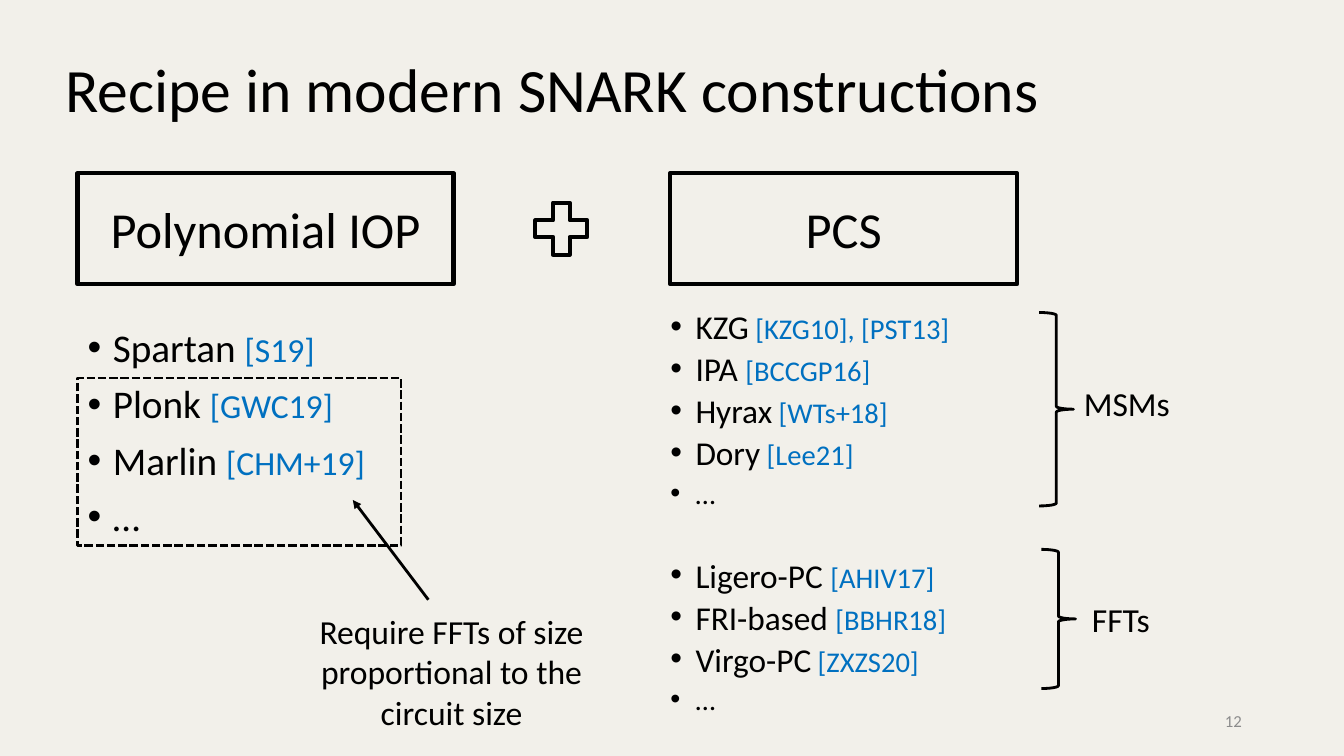
import pptx
import pptx.dml.color
import pptx.enum.dml
import pptx.enum.shapes
import pptx.enum.text
import pptx.oxml.ns
import pptx.util
from lxml import etree

Pt = pptx.util.Pt
ALIGN = pptx.enum.text.PP_ALIGN
ANCHOR = pptx.enum.text.MSO_ANCHOR
SHAPE = pptx.enum.shapes.MSO_SHAPE

COLORS = {"background": "F2F0EA", "ink": "000000", "citation": "0070C0", "number": "8C8C8C"}
FONT = "Calibri"
BULLET_INDENT = 18

IOP_ITEMS = [("Spartan ", "[S19]"), ("Plonk ", "[GWC19]"), ("Marlin ", "[CHM+19]"), ("…", "")]
MSM_ITEMS = [("KZG", " [KZG10], [PST13]"), ("IPA ", "[BCCGP16]"), ("Hyrax", " [WTs+18]"),
             ("Dory", " [Lee21]"), ("", "…")]
FFT_ITEMS = [("Ligero-PC ", "[AHIV17]"), ("FRI-based ", "[BBHR18]"), ("Virgo-PC", " [ZXZS20]"),
             ("", "…")]


def rgb(name):
    return pptx.dml.color.RGBColor.from_string(COLORS[name])


def style_font(font, size, color="ink"):
    font.name = FONT
    font.size = Pt(size)
    font.color.rgb = rgb(color)


def place(shape, left, top, width, height):
    shape.left, shape.top = Pt(left), Pt(top)
    shape.width, shape.height = Pt(width), Pt(height)


def write_line(shape, text, size, align, color="ink", anchor=ANCHOR.TOP):
    frame = shape.text_frame
    frame.word_wrap = True
    frame.auto_size = pptx.enum.text.MSO_AUTO_SIZE.NONE
    frame.vertical_anchor = anchor
    frame.text = text
    paragraph = frame.paragraphs[0]
    paragraph.alignment = align
    style_font(paragraph.font, size, color)
    return paragraph


def add_label(slide, text, box, size=24, align=ALIGN.CENTER, **options):
    label = slide.shapes.add_textbox(*map(Pt, box))
    write_line(label, text, size, align, **options)


def add_outline(slide, kind, box, weight, dash=None):
    """Add an unfilled preset shape with a black line."""
    shape = slide.shapes.add_shape(kind, *map(Pt, box))
    shape.shadow.inherit = False
    shape.fill.background()
    shape.line.color.rgb = rgb("ink")
    shape.line.width = Pt(weight)
    if dash:
        shape.line.dash_style = dash
    return shape


def add_heading_box(slide, text, box):
    shape = add_outline(slide, SHAPE.RECTANGLE, box, 3)
    write_line(shape, text, 36, ALIGN.CENTER, anchor=ANCHOR.MIDDLE)


def add_arrow(slide, start, end):
    arrow = slide.shapes.add_connector(
        pptx.enum.shapes.MSO_CONNECTOR.STRAIGHT, *map(Pt, start + end))
    arrow.line.color.rgb = rgb("ink")
    arrow.line.width = Pt(2)
    qn = pptx.oxml.ns.qn
    etree.SubElement(arrow.line._get_or_add_ln(), qn("a:tailEnd"), type="triangle")
    etree.SubElement(arrow._element.spPr, qn("a:effectLst"))


def set_bullet(paragraph):
    properties = paragraph._p.get_or_add_pPr()
    properties.set("marL", str(Pt(BULLET_INDENT)))
    properties.set("indent", str(-Pt(BULLET_INDENT)))
    qn = pptx.oxml.ns.qn
    etree.SubElement(properties, qn("a:buFont"), typeface="Arial")
    etree.SubElement(properties, qn("a:buChar"), char="•")


def fill_list(placeholder, groups, name_size, citation_size, line_spacing, group_gap=0):
    """Write groups of (name, citation) bullets, with group_gap before each later group."""
    frame = placeholder.text_frame
    frame.word_wrap = True
    frame.auto_size = pptx.enum.text.MSO_AUTO_SIZE.NONE
    for group_index, group in enumerate(groups):
        for item_index, (name, citation) in enumerate(group):
            first = group_index == item_index == 0
            paragraph = frame.paragraphs[0] if first else frame.add_paragraph()
            set_bullet(paragraph)
            paragraph.line_spacing = line_spacing
            gap = 10 if item_index else group_gap
            paragraph.space_before = Pt(0 if first else gap)
            citation_color = "ink" if citation == "…" else "citation"
            for text, size, color in ((name, name_size, "ink"),
                                      (citation, citation_size, citation_color)):
                if text:
                    run = paragraph.add_run()
                    run.text = text
                    style_font(run.font, size, color)


def add_braced_label(slide, text, brace_box, label_box):
    add_outline(slide, SHAPE.RIGHT_BRACE, brace_box, 2)
    add_label(slide, text, label_box)


def main():
    presentation = pptx.Presentation()
    presentation.slide_width, presentation.slide_height = Pt(960), Pt(540)
    slide = presentation.slides.add_slide(presentation.slide_layouts.get_by_name("Two Content"))
    slide.background.fill.solid()
    slide.background.fill.fore_color.rgb = rgb("background")

    title, iop_list, pcs_list = slide.placeholders
    place(title, 39.6, 36.7, 828, 59)
    heading = write_line(title, "Recipe in modern SNARK constructions", 44, ALIGN.LEFT,
                         anchor=ANCHOR.MIDDLE)
    heading.line_spacing = 0.9
    add_label(slide, "12", (678.2, 500.4, 216, 28.8), size=12, align=ALIGN.RIGHT,
              color="number", anchor=ANCHOR.MIDDLE)

    add_heading_box(slide, "Polynomial IOP", (55.4, 123.8, 268.6, 79.2))
    add_heading_box(slide, "PCS", (478.8, 123.8, 247.7, 79.2))
    add_outline(slide, SHAPE.MATH_PLUS, (375.8, 138.2, 50.4, 50.4), 3)

    place(iop_list, 55.4, 231.1, 268.6, 172.1)
    fill_list(iop_list, [IOP_ITEMS], 28, 24, 0.9)
    place(pcs_list, 471.6, 223.2, 370, 306.7)
    fill_list(pcs_list, [MSM_ITEMS, FFT_ITEMS], 23.8, 20.4, 0.7, group_gap=40)

    add_braced_label(slide, "MSMs", (742.3, 223.2, 24.5, 138.2), (756.7, 270, 96.5, 36))
    add_braced_label(slide, "FFTs", (743.8, 392.4, 24.5, 99.4), (750.2, 424.1, 100.8, 36))

    add_outline(slide, SHAPE.RECTANGLE, (55.4, 270, 231.1, 119.5), 2,
                dash=pptx.enum.dml.MSO_LINE.SQUARE_DOT)
    add_arrow(slide, (306, 428.4), (252, 357.1))
    add_label(slide, "Require FFTs of size proportional to the circuit size",
              (198, 432.7, 249.1, 94.3))
    presentation.save("out.pptx")


if __name__ == "__main__":
    main()
